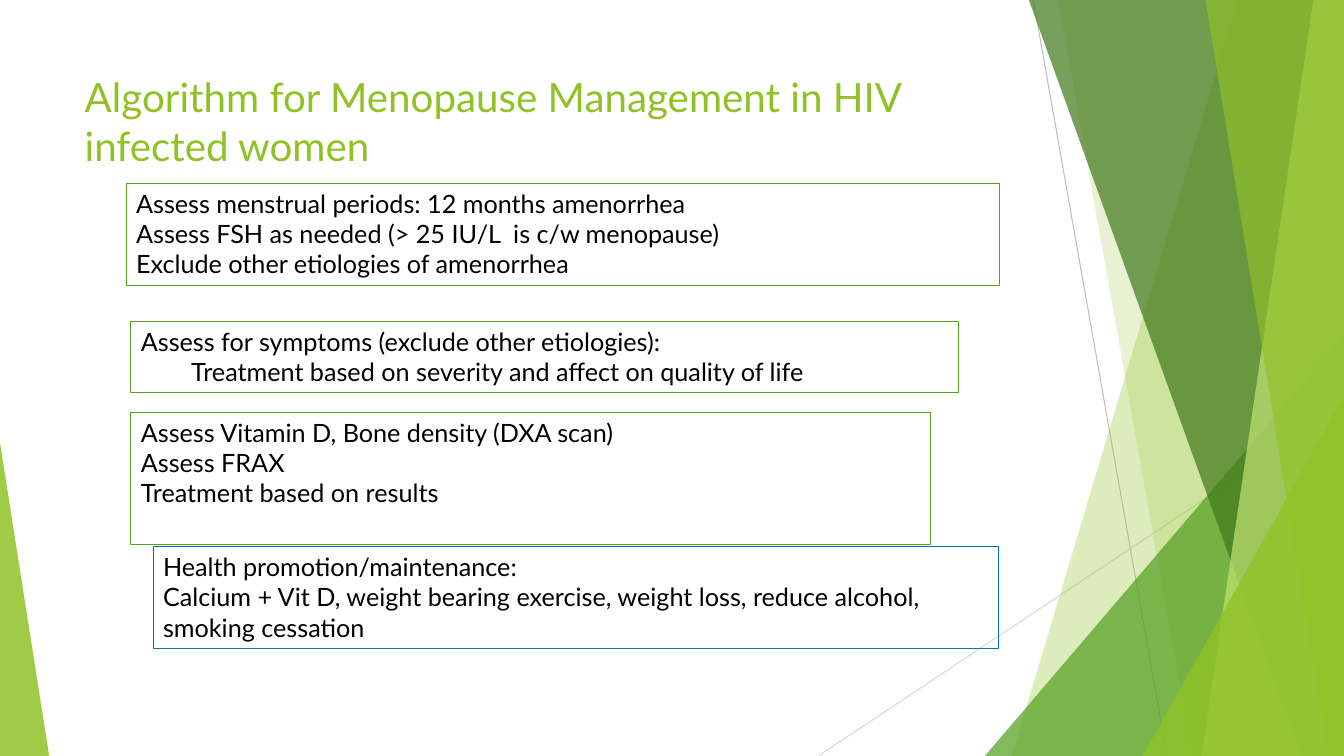
from dataclasses import dataclass

from lxml.etree import SubElement
from pptx import Presentation
from pptx.dml.color import RGBColor
from pptx.enum.shapes import MSO_CONNECTOR, MSO_SHAPE
from pptx.enum.text import MSO_ANCHOR, MSO_AUTO_SIZE, PP_ALIGN
from pptx.oxml.ns import qn
from pptx.util import Cm, Pt


@dataclass(frozen=True)
class Theme:
    """Colours, font and type sizes of the deck."""
    lime: str = "90C226"
    pale: str = "C0E474"
    green: str = "54A021"
    forest: str = "3F7819"
    blue: str = "0070C0"
    black: str = "000000"
    grey: str = "BFBFBF"
    light_grey: str = "D9D9D9"
    font: str = "Lato"
    title: float = 28.8
    body: float = 18
    rule: float = 0.75


T = Theme()
PAGE_W, PAGE_H = 33.87, 19.05

STEPS = [
    ((3.18, 4.62, 22.0, 2.57), T.green,
     [("Assess menstrual periods: 12 months amenorrhea", 0),
      ("Assess FSH as needed (> 25 IU/L  is c/w menopause)", 0),
      ("Exclude other etiologies of amenorrhea", 0)]),
    ((3.3, 8.1, 20.85, 1.8), T.green,
     [("Assess for symptoms (exclude other etiologies):", 0),
      ("Treatment based on severity and affect on quality of life", 1)]),
    ((3.3, 10.39, 20.14, 3.33), T.green,
     [("Assess Vitamin D, Bone density (DXA scan)", 0),
      ("Assess FRAX", 0),
      ("Treatment based on results", 0)]),
    ((3.86, 13.77, 21.31, 2.57), T.blue,
     [("Health promotion/maintenance:", 0),
      ("Calcium + Vit D, weight bearing exercise, weight loss, "
       "reduce alcohol, smoking cessation", 0)]),
]


def rgb(color):
    """Turn a hex string into a colour."""
    return RGBColor.from_string(color)


def write(p, text, size=T.body, color=T.black, level=0):
    """Fill a paragraph with one formatted, left-aligned run."""
    p.alignment = PP_ALIGN.LEFT
    if level:
        p.level = level
        pPr = p._p.get_or_add_pPr()
        pPr.set("marL", str(Cm(1.27 * level)))
        pPr.set("indent", "0")
    r = p.add_run()
    r.text = text
    r.font.name = T.font
    r.font.size = Pt(size)
    r.font.color.rgb = rgb(color)


def set_frame(tf):
    """Wrap text from the top of its shape at a fixed size."""
    tf.word_wrap = True
    tf.auto_size = MSO_AUTO_SIZE.NONE
    tf.vertical_anchor = MSO_ANCHOR.TOP


def tint(sp, color, opacity):
    """Give a shape a translucent fill without outline or shadow."""
    sp.shadow.inherit = False
    sp.line.fill.background()
    sp.fill.solid()
    sp.fill.fore_color.rgb = rgb(color)
    clr = sp._element.spPr.find(qn("a:solidFill"))[0]
    SubElement(clr, qn("a:alpha")).set("val", str(opacity * 1000))


def add_rule(s, x1, y1, x2, y2, color):
    """Draw a thin straight line."""
    ln = s.shapes.add_connector(MSO_CONNECTOR.STRAIGHT, Cm(x1), Cm(y1), Cm(x2), Cm(y2))
    ln.line.color.rgb = rgb(color)
    ln.line.width = Pt(T.rule)
    SubElement(ln._element.spPr, qn("a:effectLst"))


def add_facet(s, top_x, bottom_x, y, right, bottom, color, opacity):
    """Draw a slanted facet that reaches the right edge."""
    fb = s.shapes.build_freeform(Cm(top_x), Cm(y))
    fb.add_line_segments([(Cm(right), Cm(y)), (Cm(right), Cm(bottom)),
                          (Cm(bottom_x), Cm(bottom))])
    tint(fb.convert_to_shape(), color, opacity)


def add_corner(s, x, y, w, h, apex, color, opacity):
    """Draw a triangle with its apex at the given share of its width."""
    sp = s.shapes.add_shape(MSO_SHAPE.ISOSCELES_TRIANGLE, Cm(x), Cm(y), Cm(w), Cm(h))
    sp.adjustments[0] = apex
    tint(sp, color, opacity)


def add_fan(s, x, y, w, h):
    """Draw the overlapping green facets along the right edge."""
    right, bottom = x + w, y + h

    def facet(top_dx, bottom_dx, color, opacity):
        add_facet(s, x + top_dx, x + bottom_dx, y, right, bottom, color, opacity)

    def corner(dx, dy, color, opacity):
        add_corner(s, x + dx, y + dy, w - dx, h - dy, 1, color, opacity)

    add_rule(s, x + 5.42, y, x + 8.79, bottom, T.grey)
    add_rule(s, right, y + 10.24, x, bottom, T.light_grey)
    facet(10.57, 4.88, T.lime, 30)
    facet(6.05, 9.43, T.lime, 20)
    corner(4.2, 8.46, T.green, 72)
    facet(5.31, 12.17, T.forest, 70)
    facet(12.48, 9.66, T.pale, 70)
    facet(9.76, 12.86, T.lime, 65)
    corner(8.18, 9.98, T.lime, 80)


def add_title(s, x, y, w, h, text):
    """Place and format the title placeholder."""
    sp = s.shapes.title
    sp.left, sp.top, sp.width, sp.height = Cm(x), Cm(y), Cm(w), Cm(h)
    set_frame(sp.text_frame)
    write(sp.text_frame.paragraphs[0], text, size=T.title, color=T.lime)


def add_step(s, x, y, w, h, color, lines):
    """Draw one outlined box of the algorithm."""
    sp = s.shapes.add_shape(MSO_SHAPE.RECTANGLE, Cm(x), Cm(y), Cm(w), Cm(h))
    sp.shadow.inherit = False
    sp.fill.background()
    sp.line.color.rgb = rgb(color)
    sp.line.width = Pt(T.rule)
    tf = sp.text_frame
    set_frame(tf)
    for i, (text, level) in enumerate(lines):
        p = tf.add_paragraph() if i else tf.paragraphs[0]
        write(p, text, level=level)


def main():
    """Build the slide and save it."""
    prs = Presentation()
    prs.slide_width, prs.slide_height = Cm(PAGE_W), Cm(PAGE_H)
    s = prs.slides.add_slide(prs.slide_layouts[5])
    add_fan(s, 20.62, 0, PAGE_W - 20.62, PAGE_H)
    add_corner(s, 0, 11.15, 1.24, PAGE_H - 11.15, 0, T.lime, 85)
    add_title(s, 1.88, 1.7, 23.88, 2.92,
              "Algorithm for Menopause Management in HIV infected women")
    for box, color, lines in STEPS:
        add_step(s, *box, color, lines)
    prs.save("out.pptx")


if __name__ == "__main__":
    main()
